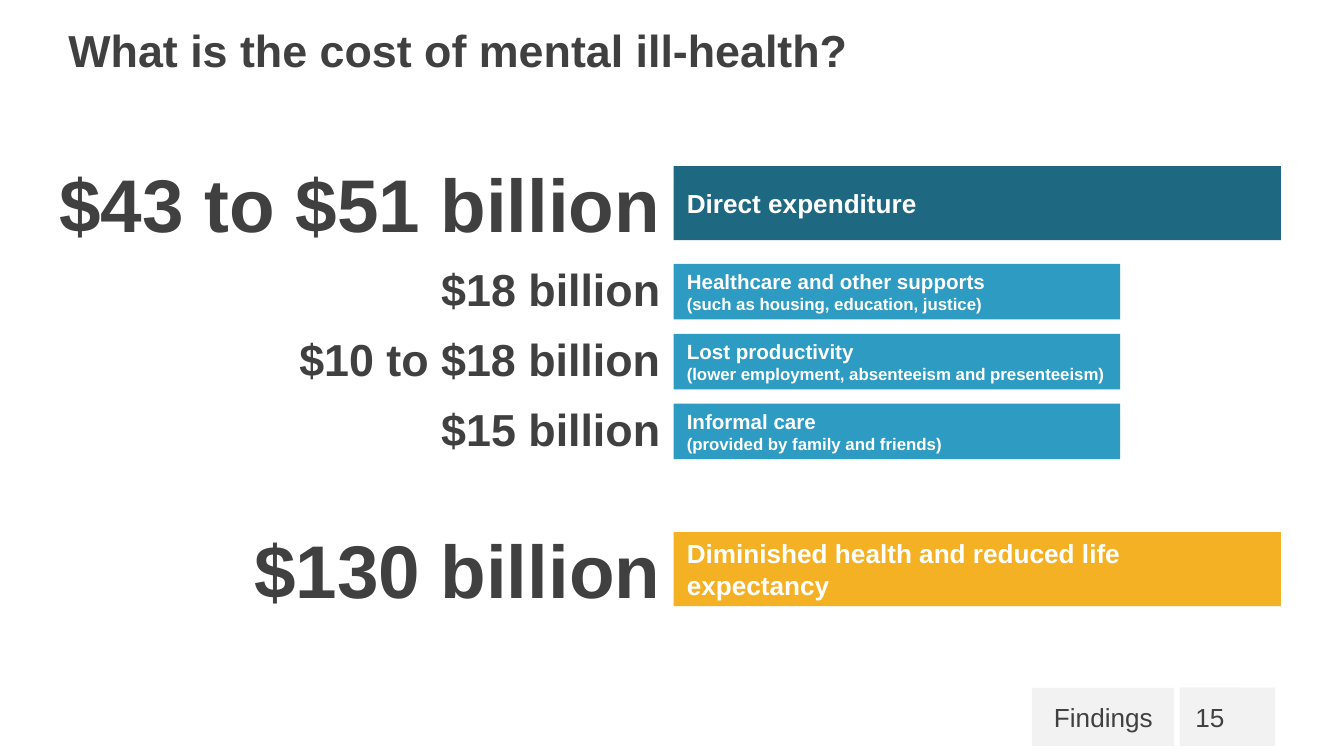
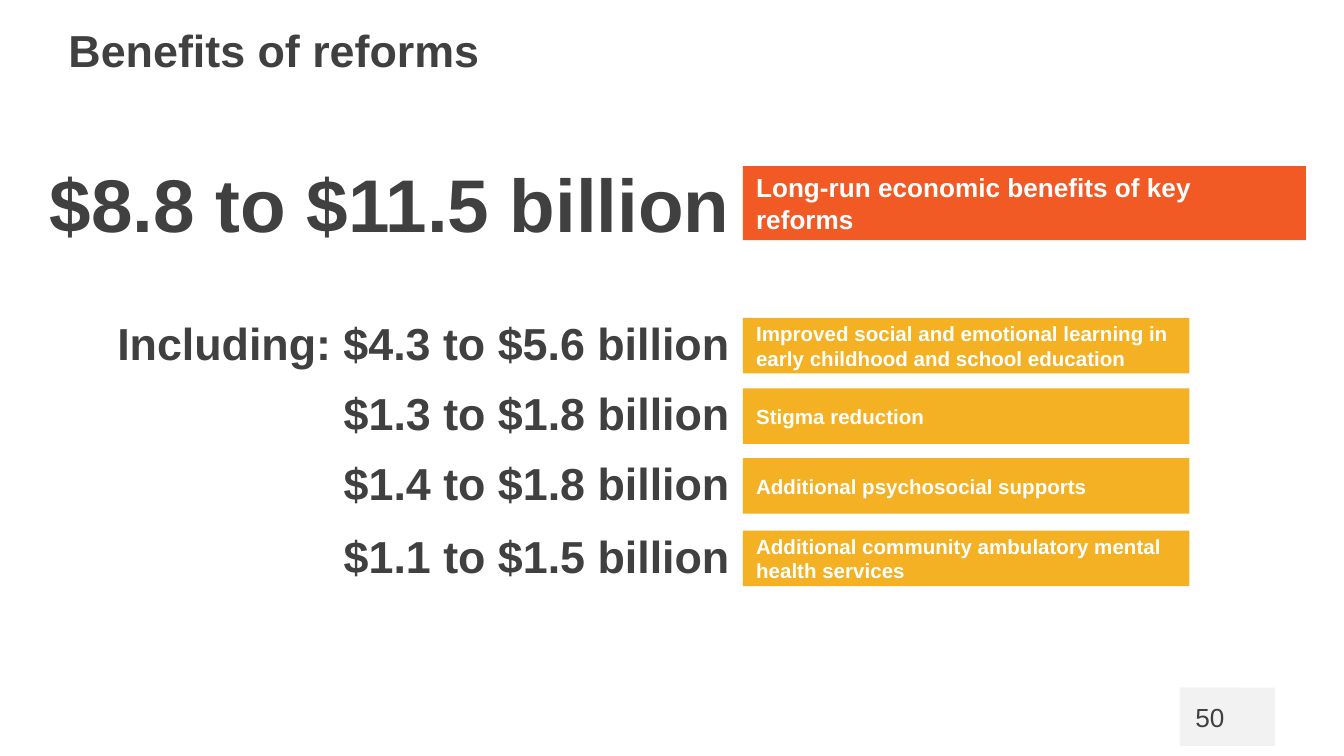
from lxml import etree
from pptx import Presentation
from pptx.dml.color import RGBColor
from pptx.enum.shapes import MSO_SHAPE
from pptx.enum.text import MSO_ANCHOR, MSO_AUTO_SIZE, PP_ALIGN
from pptx.oxml.ns import qn
from pptx.util import Cm, Pt

RECT = MSO_SHAPE.RECTANGLE
TOP, MIDDLE = MSO_ANCHOR.TOP, MSO_ANCHOR.MIDDLE
LEFT, CENTER, RIGHT = PP_ALIGN.LEFT, PP_ALIGN.CENTER, PP_ALIGN.RIGHT
GROW, FIXED = MSO_AUTO_SIZE.SHAPE_TO_FIT_TEXT, MSO_AUTO_SIZE.NONE

INK, WHITE, PALE = "404040", "FFFFFF", "F2F2F2"
TEAL, BLUE, GOLD, ORANGE = "1F6882", "2E9BC3", "F4B123", "F15A25"
FOOT_TOP, FOOT_HIGH, PAGE_LEFT = 13.0, 1.1, 22.3
SMALL = 8.44

# Each row: large?, top, amount, amount width, bar width, bar colour, label lines
SLIDES = [
    ("What is the cost of mental ill-health?", 15.37, "Findings", "15", 12.73, [
        (True, 3.14, "$43 to $51 billion", 11.99, 11.48, TEAL,
         ["Direct expenditure"]),
        (False, 4.99, "$18 billion", 4.67, SMALL, BLUE,
         ["Healthcare and other supports",
          "(such as housing, education, justice)"]),
        (False, 6.31, "$10 to $18 billion", 7.39, SMALL, BLUE,
         ["Lost productivity",
          "(lower employment, absenteeism and presenteeism)"]),
        (False, 7.63, "$15 billion", 4.67, SMALL, BLUE,
         ["Informal care", "(provided by family and friends)"]),
        (True, 10.06, "$130 billion", 8.28, 11.48, GOLD,
         ["Diminished health and reduced life expectancy"]),
    ]),
    ("Benefits of reforms", 8.36, None, "50", 14.04, [
        (True, 3.14, "$8.8 to $11.5 billion", 13.49, 10.64, ORANGE,
         ["Long-run economic benefits of key reforms"]),
        (False, 6.01, "Including: $4.3 to $5.6 billion", 12.17, SMALL, GOLD,
         ["Improved social and emotional learning in early childhood "
          "and school education"]),
        (False, 7.34, "$1.3 to $1.8 billion", 7.87, SMALL, GOLD,
         ["Stigma reduction"]),
        (False, 8.66, "$1.4 to $1.8 billion", 7.87, SMALL, GOLD,
         ["Additional psychosocial supports"]),
        (False, 10.03, "$1.1 to $1.5 billion", 7.87, SMALL, GOLD,
         ["Additional community ambulatory mental health services"]),
    ]),
]


def paint(shape, color):
    """Give a shape a plain fill with no outline."""
    shape.fill.solid()
    shape.fill.fore_color.rgb = RGBColor.from_string(color)
    shape.line.fill.background()


def write(shape, lines, sizes, color, bold, align, anchor,
          wrap=False, fit=GROW):
    """Fill a shape with one paragraph per line, each with its own size."""
    frame = shape.text_frame
    frame.text = "\n".join(lines)
    frame.word_wrap = wrap
    frame.auto_size = fit
    frame.vertical_anchor = anchor
    for par, size in zip(frame.paragraphs, sizes):
        par.alignment = align
        par.space_before = Pt(0)
        font = par.runs[0].font
        font.name, font.size, font.bold = "Arial", Pt(size), bold
        font.color.rgb = RGBColor.from_string(color)


deck = Presentation()
deck.slide_width, deck.slide_height = Cm(25.4), Cm(14.29)

for heading, wide, section, number, split, rows in SLIDES:
    slide = deck.slides.add_slide(deck.slide_layouts[1 if section else 5])
    shapes = slide.shapes

    title = shapes.title
    title.left, title.top = Cm(1.04), Cm(0.3)
    title.width, title.height = Cm(wide), Cm(1.28)
    write(title, [heading], [24], INK, True, LEFT, TOP)

    pad = shapes.add_shape(RECT, Cm(PAGE_LEFT), Cm(FOOT_TOP),
                           Cm(1.8), Cm(FOOT_HIGH))
    pad.shadow.inherit = False
    paint(pad, PALE)

    page = shapes.add_textbox(Cm(PAGE_LEFT), Cm(FOOT_TOP),
                              Cm(1.13), Cm(FOOT_HIGH))
    paint(page, PALE)
    write(page, [number], [14], INK, False, CENTER, MIDDLE)
    frame = page.text_frame
    frame.margin_top = frame.margin_bottom = Cm(0.25)

    if section:
        tag = slide.placeholders[1]
        tag.left, tag.top = Cm(19.5), Cm(FOOT_TOP)
        tag.width, tag.height = Cm(2.69), Cm(FOOT_HIGH)
        paint(tag, PALE)
        # A growing placeholder would keep the layout's full height
        write(tag, [section], [14], INK, False, RIGHT, MIDDLE, fit=FIXED)
        frame = tag.text_frame
        frame.margin_left = frame.margin_right = Cm(0.4)
        frame.margin_top = frame.margin_bottom = Cm(0.25)
        ppr = frame.paragraphs[0]._p.get_or_add_pPr()
        ppr.set("marL", "0")
        ppr.set("indent", "0")
        etree.SubElement(ppr, qn("a:buNone"))

    for large, top, amount, reach, span, color, label in rows:
        high, tall, size = (1.4, 1.96, 40) if large else (1.05, 1.28, 24)
        bar = shapes.add_shape(RECT, Cm(split), Cm(top), Cm(span), Cm(high))
        bar.shadow.inherit = False
        paint(bar, color)
        write(bar, label, [14] if large else [11, 9], WHITE, True,
              LEFT, MIDDLE, wrap=True, fit=FIXED)

        lift = 0 if large else 0.05
        box = shapes.add_textbox(Cm(split - reach),
                                 Cm(top + (high - tall) / 2 - lift),
                                 Cm(reach), Cm(tall))
        write(box, [amount], [size], INK, True, RIGHT, TOP)

deck.save("out.pptx")
